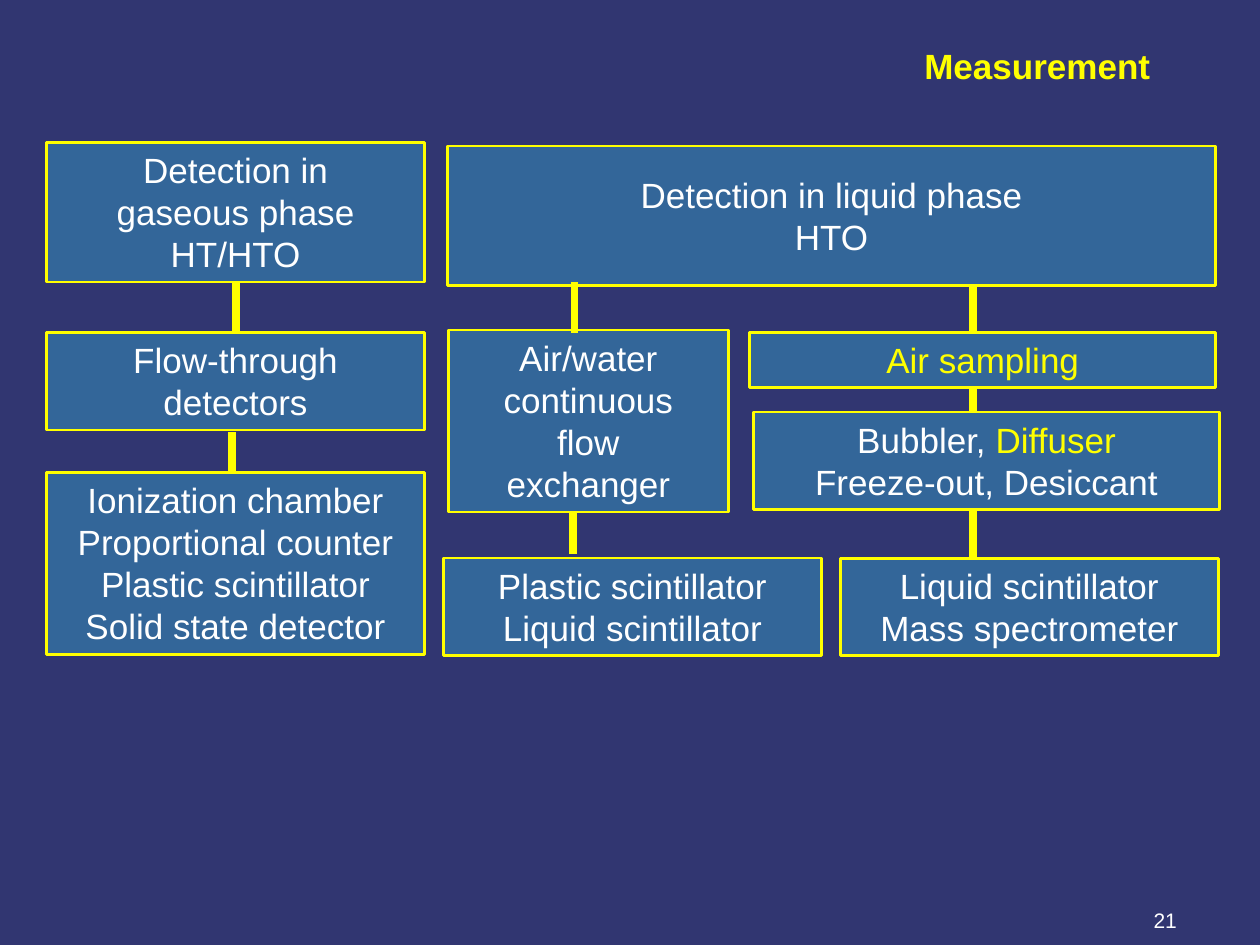
from typing import NamedTuple

from lxml.etree import SubElement
from pptx import Presentation
from pptx.dml.color import RGBColor
from pptx.enum.shapes import MSO_CONNECTOR as Connector, MSO_SHAPE as Shape
from pptx.enum.text import MSO_ANCHOR as Anchor, MSO_AUTO_SIZE as AutoSize, PP_ALIGN as Align
from pptx.oxml.ns import qn
from pptx.util import Inches, Pt

WIDTH, HEIGHT = Inches(10), Inches(7.5)
COLUMNS, ROWS = 100, 75
NAVY, BLUE, YELLOW, WHITE = "313671", "336699", "FFFF00", "FFFFFF"
LINE_ROWS, PADDING_ROWS = 3.36, 1


class Words(NamedTuple):
    text: str
    color: str = WHITE
    size: float = 20
    bold: bool = False


class Step(NamedTuple):
    column: float
    row: float
    columns: float
    lines: list[list[Words]]
    line_slots: int = 0
    border: float = 1.5


class Link(NamedTuple):
    column: float
    top: float
    bottom: float


def plain(*texts: str) -> list[list[Words]]:
    return [[Words(text)] for text in texts]


LINKS_BEHIND = [
    Link(77.2, 22.4, 26.4),
    Link(77.2, 30.5, 33.2),
    Link(77.2, 40.5, 45.6),
    Link(45.5, 40, 44),
]
LINKS_IN_FRONT = [
    Link(45.6, 22.4, 26.4),
    Link(18.7, 22.4, 26.4),
    Link(18.4, 34.3, 37.6),
]
STEPS = [
    Step(3.7, 11.3, 30, plain("Detection in", "gaseous phase", "HT/HTO")),
    Step(3.7, 26.4, 30, plain("Flow-through", "detectors")),
    Step(3.7, 37.5, 30, plain("Ionization chamber", "Proportional counter",
                              "Plastic scintillator", "Solid state detector")),
    Step(35.5, 11.6, 61, plain("Detection in liquid phase", "HTO"), line_slots=3),
    Step(35.6, 26.2, 22.2, plain("Air/water", "continuous", "flow", "exchanger")),
    Step(35.2, 44.3, 30, plain("Plastic scintillator", "Liquid scintillator")),
    Step(66.7, 44.3, 30, plain("Liquid scintillator", "Mass spectrometer"), border=1.75),
    Step(59.8, 32.7, 37, [[Words("Bubbler, "), Words("Diffuser", YELLOW)],
                          [Words("Freeze-out, Desiccant")]]),
    Step(59.5, 26.4, 37, [[Words("Air sampling", YELLOW)]]),
]


def x(columns: float) -> int:
    return round(WIDTH * columns / COLUMNS)


def y(rows: float) -> int:
    return round(HEIGHT * rows / ROWS)


def rgb(color: str) -> RGBColor:
    return RGBColor.from_string(color)


def place(shape, column: float, row: float, columns: float, rows: float) -> None:
    shape.left, shape.top = x(column), y(row)
    shape.width, shape.height = x(columns), y(rows)


def write(shape, lines: list[list[Words]], align: Align, anchor: Anchor) -> None:
    frame = shape.text_frame
    frame.word_wrap = True
    frame.auto_size = AutoSize.NONE
    frame.vertical_anchor = anchor
    for index, line in enumerate(lines):
        para = frame.add_paragraph() if index else frame.paragraphs[0]
        para.alignment = align
        for words in line:
            span = para.add_run()
            span.text = words.text
            span.font.name = "Arial"
            span.font.size = Pt(words.size)
            span.font.bold = words.bold
            span.font.color.rgb = rgb(words.color)


def draw_link(page, link: Link) -> None:
    connector = page.shapes.add_connector(
        Connector.STRAIGHT, x(link.column), y(link.top), x(link.column), y(link.bottom))
    connector.line.color.rgb = rgb(YELLOW)
    connector.line.width = Pt(4.5)
    SubElement(connector._element.spPr, qn("a:effectLst"))


def draw_step(page, step: Step) -> None:
    rows = PADDING_ROWS + LINE_ROWS * (step.line_slots or len(step.lines))
    box = page.shapes.add_shape(
        Shape.RECTANGLE, x(step.column), y(step.row), x(step.columns), y(rows))
    box.shadow.inherit = False
    box.fill.solid()
    box.fill.fore_color.rgb = rgb(BLUE)
    box.line.color.rgb = rgb(YELLOW)
    box.line.width = Pt(step.border)
    write(box, step.lines, Align.CENTER, Anchor.MIDDLE if step.line_slots else Anchor.TOP)


def main() -> None:
    deck = Presentation()
    deck.slide_width, deck.slide_height = WIDTH, HEIGHT
    page = deck.slides.add_slide(deck.slide_layouts.get_by_name("Title Only"))
    page.background.fill.solid()
    page.background.fill.fore_color.rgb = rgb(NAVY)

    title = page.shapes.title
    place(title, 5.8, 3, 86.5, 4.4)
    write(title, [[Words("Measurement", YELLOW, bold=True)]], Align.RIGHT, Anchor.TOP)

    number = page.shapes.add_textbox(x(71.1), y(71), x(23.3), y(4))
    write(number, [[Words("21", size=12)]], Align.RIGHT, Anchor.MIDDLE)

    for link in LINKS_BEHIND:
        draw_link(page, link)
    for step in STEPS:
        draw_step(page, step)
    for link in LINKS_IN_FRONT:
        draw_link(page, link)

    deck.save("out.pptx")


if __name__ == "__main__":
    main()
